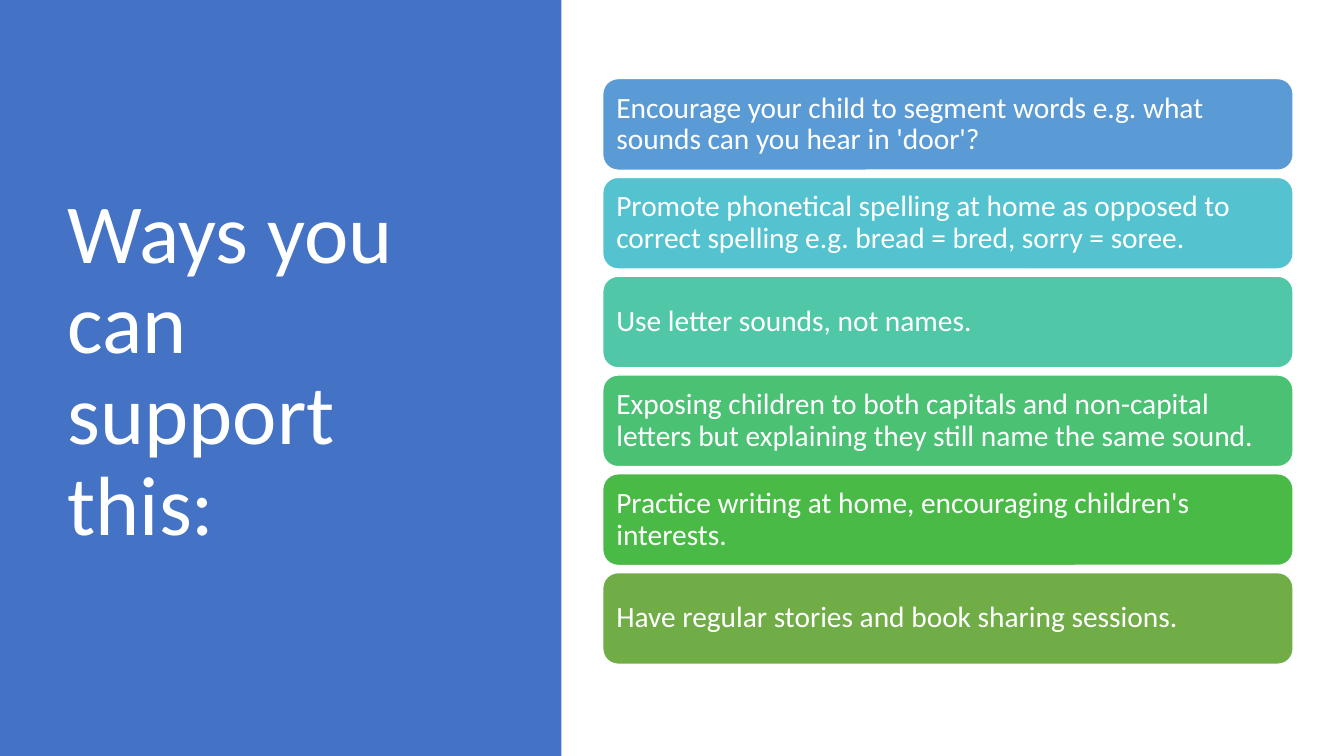
from pptx import Presentation
from pptx.dml.color import RGBColor
from pptx.enum.shapes import MSO_SHAPE
from pptx.enum.text import MSO_ANCHOR, MSO_AUTO_SIZE, PP_ALIGN
from pptx.util import Cm, Pt

RECTANGLE = MSO_SHAPE.RECTANGLE
ROUNDED = MSO_SHAPE.ROUNDED_RECTANGLE
MIDDLE = MSO_ANCHOR.MIDDLE
NO_FIT = MSO_AUTO_SIZE.NONE
LEFT = PP_ALIGN.LEFT

SLIDE_WIDTH, SLIDE_HEIGHT = 33.87, 19.05
TITLE_ONLY = 5
TIP_TOP, TIP_PITCH = 1.98, 2.49

TIPS = [
    ("Encourage your child to segment words e.g. what sounds can you hear in 'door'?", "5B9BD5"),
    ("Promote phonetical spelling at home as opposed to correct spelling e.g. bread = bred, sorry = soree.", "55C3CF"),
    ("Use letter sounds, not names.", "50C8A7"),
    ("Exposing children to both capitals and non-capital letters but explaining they still name the same sound.", "4BC174"),
    ("Practice writing at home, encouraging children's interests.", "4ABA46"),
    ("Have regular stories and book sharing sessions.", "70AD47"),
]


def colour(hex_code):
    """Turn a hex string into a colour."""
    return RGBColor.from_string(hex_code)


def write(frame, text, *, size, font="Calibri", ink="FFFFFF", inset=None):
    """Put formatted, left-aligned text into a text frame."""
    frame.word_wrap = True
    frame.auto_size = NO_FIT
    frame.vertical_anchor = MIDDLE
    if inset is not None:
        frame.margin_left = frame.margin_right = Cm(inset)
        frame.margin_top = frame.margin_bottom = Cm(inset)
    paragraph = frame.paragraphs[0]
    paragraph.alignment = LEFT
    paragraph.line_spacing = 0.9
    run = paragraph.add_run()
    run.text = text
    run.font.name = font
    run.font.size = Pt(size)
    run.font.color.rgb = colour(ink)


class TipSlide:
    """Holds the style and the current slide."""

    outline = "FFFFFF"
    title_size = 60
    tip_size = 21

    def __init__(self, deck):
        """Add a title-only slide to the deck."""
        self.slide = deck.slides.add_slide(deck.slide_layouts[TITLE_ONLY])

    def block(self, preset, left, top, width, height, fill):
        """Add a filled preset shape without outline or shadow."""
        block = self.slide.shapes.add_shape(
            preset, Cm(left), Cm(top), Cm(width), Cm(height))
        block.shadow.inherit = False
        block.fill.solid()
        block.fill.fore_color.rgb = colour(fill)
        block.line.fill.background()
        return block

    def panel(self, left, top, width, height, fill):
        """Add a colour panel behind the title."""
        panel = self.block(RECTANGLE, left, top, width, height, fill)
        self.slide.shapes.title.element.addprevious(panel.element)

    def title(self, text, left, top, width, height):
        """Place and fill the title placeholder."""
        heading = self.slide.shapes.title
        heading.left, heading.top = Cm(left), Cm(top)
        heading.width, heading.height = Cm(width), Cm(height)
        write(heading.text_frame, text, size=self.title_size)

    def tip(self, text, left, top, width, height, fill):
        """Add a rounded bar holding one tip."""
        bar = self.block(ROUNDED, left, top, width, height, fill)
        bar.line.color.rgb = colour(self.outline)
        bar.line.width = Pt(1)
        write(bar.text_frame, text, size=self.tip_size, inset=0.23)


def main():
    """Build and save the slide."""
    deck = Presentation()
    deck.slide_width, deck.slide_height = Cm(SLIDE_WIDTH), Cm(SLIDE_HEIGHT)
    page = TipSlide(deck)
    page.panel(0, 0, 14.15, SLIDE_HEIGHT, "4472C4")
    page.title("Ways you can support this:", 1.45, 1.73, 10.57, 15.29)
    for row, (advice, fill) in enumerate(TIPS):
        page.tip(advice, 15.19, TIP_TOP + row * TIP_PITCH, 17.4, 2.31, fill)
    deck.save("out.pptx")


if __name__ == "__main__":
    main()
